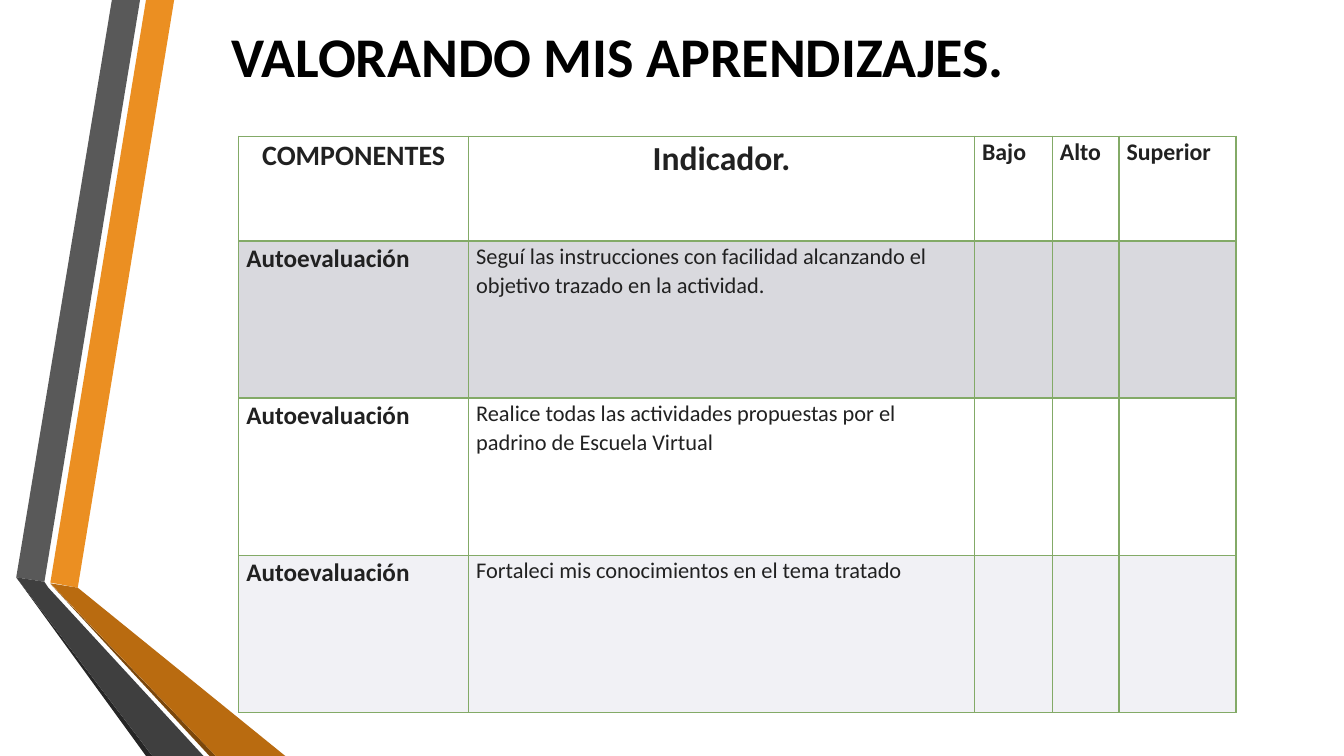
from lxml import etree
from pptx import Presentation
from pptx.dml.color import RGBColor
from pptx.enum.text import MSO_ANCHOR, PP_ALIGN
from pptx.oxml.ns import qn
from pptx.util import Cm, Pt

LEFT, CENTER = PP_ALIGN.LEFT, PP_ALIGN.CENTER
BOTTOM = MSO_ANCHOR.BOTTOM

BLACK = RGBColor(0x00, 0x00, 0x00)
INK = RGBColor(0x21, 0x21, 0x21)
GREEN = RGBColor(0x83, 0xAA, 0x67)
SLATE = RGBColor(0x45, 0x42, 0x5C)
LILAC = RGBColor(0xBD, 0xBC, 0xCE)
ORANGE = RGBColor(0xEB, 0x8F, 0x22)
RUST = RGBColor(0xB9, 0x6B, 0x10)
BROWN = RGBColor(0x7B, 0x47, 0x0B)
GRAY = RGBColor(0x59, 0x59, 0x59)
DARK = RGBColor(0x3F, 0x3F, 0x3F)
COAL = RGBColor(0x26, 0x26, 0x26)


def style(par, align, size, bold, color):
    par.alignment = align
    look = {"name": "Calibri", "size": Pt(size), "bold": bold}
    for key, value in look.items():
        setattr(par.font, key, value)
    par.font.color.rgb = color


def paint(cell, color, base):
    """Fill a cell at 20 % opacity, or not at all, and draw its borders."""
    props = cell._tc.get_or_add_tcPr()
    if color is None:
        cell.fill.background()
    else:
        cell.fill.solid()
        cell.fill.fore_color.rgb = color
        tone = props.find(qn("a:solidFill"))[0]
        etree.SubElement(tone, qn("a:alpha"), val="20000")
    widths = {"a:lnL": 1, "a:lnR": 1, "a:lnT": 1, "a:lnB": base}
    for spot, (tag, width) in enumerate(widths.items()):
        line = etree.Element(qn(tag), w=str(Pt(width)))
        solid = etree.SubElement(line, qn("a:solidFill"))
        etree.SubElement(solid, qn("a:srgbClr"), val=str(GREEN))
        props.insert(spot, line)


deck = Presentation()
deck.slide_width, deck.slide_height = Cm(33.87), Cm(19.05)
slide = deck.slides.add_slide(deck.slide_layouts[5])
shapes = slide.shapes

# Folded ribbons, points in hundredths of a centimetre
ribbons = [
    (ORANGE, [(127, 1468), (196, 1481), (439, 0), (368, 0)]),
    (GRAY, [(353, 0), (282, 0), (41, 1455), (112, 1466)]),
    (COAL, [(41, 1455), (368, 1905), (384, 1905)]),
    (BROWN, [(127, 1471), (528, 1905), (544, 1905)]),
    (RUST, [(127, 1470), (544, 1905), (719, 1905), (196, 1481)]),
    (DARK, [(513, 1905), (122, 1481), (112, 1466), (41, 1455), (384, 1905)]),
]
for color, points in ribbons:
    pen = shapes.build_freeform(*points[0], scale=Cm(0.01))
    pen.add_line_segments(points[1:], close=True)
    band = pen.convert_to_shape()
    band.shadow.inherit = False
    band.fill.solid()
    band.fill.fore_color.rgb = color
    band.line.fill.background()

title = shapes.title
title.left, title.top = Cm(0), Cm(0)
title.width, title.height = Cm(31.14), Cm(2.36)
title.text_frame.vertical_anchor = BOTTOM
title.text_frame.text = "VALORANDO MIS APRENDIZAJES."
style(title.text_frame.paragraphs[0], CENTER, 40, True, BLACK)

# Rubric table
heads = [
    ("COMPONENTES", CENTER, 20),
    ("Indicador.", CENTER, 24),
    ("Bajo", LEFT, 17),
    ("Alto", LEFT, 17),
    ("Superior", LEFT, 17),
]
goals = [
    "Seguí las instrucciones con facilidad alcanzando el objetivo trazado en la actividad.",
    "Realice todas las actividades propuestas por el padrino de Escuela Virtual",
    "Fortaleci mis conocimientos en el tema tratado",
]
tints = [None, SLATE, None, LILAC]
widths = [5.79, 12.75, 1.96, 1.68, 2.95]
heights = [2.64] + [3.96] * len(goals)

frame = shapes.add_table(len(heights), len(widths), Cm(6.02), Cm(3.43),
                         Cm(sum(widths)), Cm(sum(heights)))
table = frame.table
table.first_row = table.horz_banding = False
for col, width in zip(table.columns, widths):
    col.width = Cm(width)
for row, height in zip(table.rows, heights):
    row.height = Cm(height)

for r, tint in enumerate(tints):
    for c in range(len(widths)):
        cell = table.cell(r, c)
        cell.margin_left = cell.margin_right = Cm(0.19)
        cell.margin_top = cell.margin_bottom = Cm(0)
        paint(cell, tint, 2 if r == 0 else 1)
        if r == 0:
            text, align, size = heads[c]
        elif c == 0:
            text, align, size = "Autoevaluación", LEFT, 18
        elif c == 1:
            text, align, size = goals[r - 1], LEFT, 16
        else:
            continue
        cell.text = text
        par = cell.text_frame.paragraphs[0]
        par.line_spacing = 1.07
        style(par, align, size, r == 0 or c == 0, INK)

deck.save("out.pptx")
